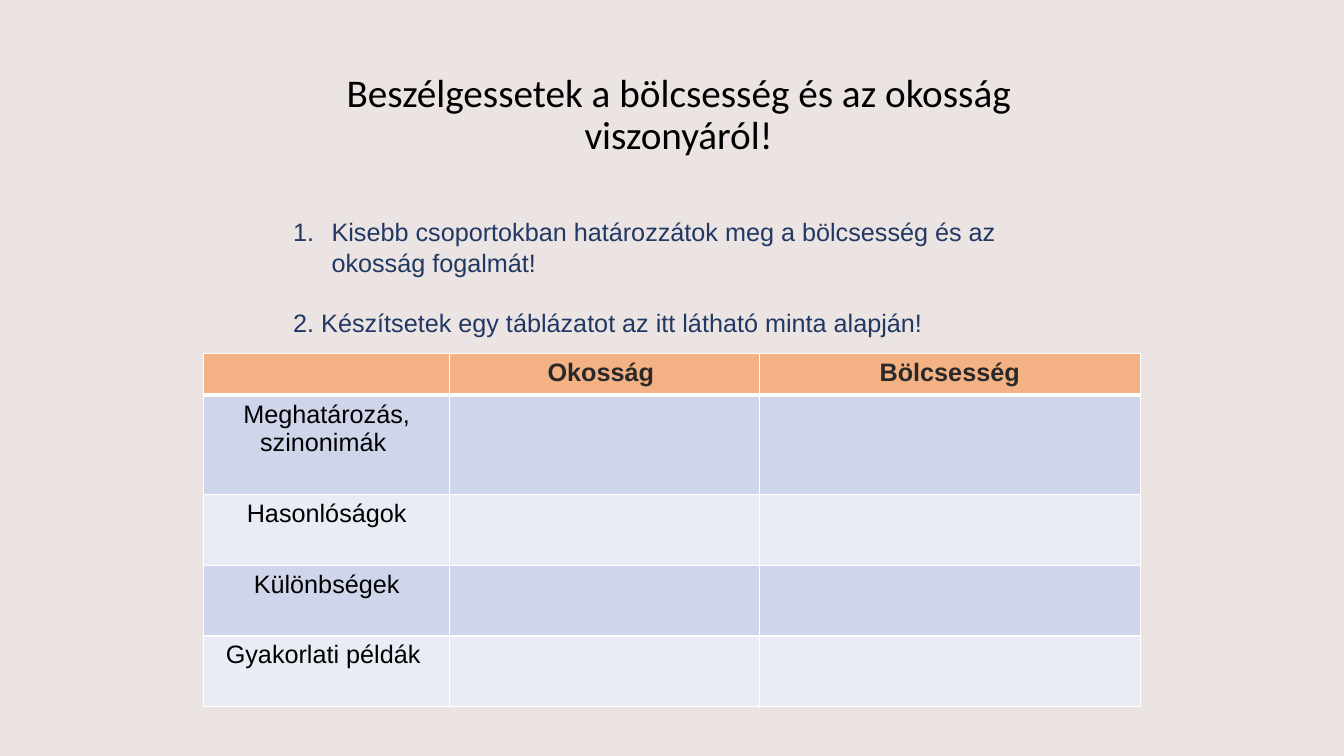
from lxml import etree
from pptx import Presentation
from pptx import util as u
from pptx.dml.color import RGBColor
from pptx.enum import text
from pptx.oxml import ns

BACKGROUND = RGBColor(0xEC, 0xE4, 0xE2)
BLACK = RGBColor(0x00, 0x00, 0x00)
NAVY = RGBColor(0x20, 0x38, 0x64)
CHARCOAL = RGBColor(0x29, 0x29, 0x29)
WHITE = RGBColor(0xFF, 0xFF, 0xFF)
ORANGE = RGBColor(0xF4, 0xB1, 0x83)
BLUE = RGBColor(0xCF, 0xD5, 0xEA)
PALE_BLUE = RGBColor(0xE9, 0xEB, 0xF5)


def add_run(paragraph, wording, size, color, font="Arial", bold=False):
    run = paragraph.add_run()
    run.text = wording
    run.font.size = u.Pt(size)
    run.font.name = font
    run.font.bold = bold
    run.font.color.rgb = color


def style_cell(cell, color, bottom_width):
    properties = cell._tc.get_or_add_tcPr()
    for side, width in (("lnL", 1), ("lnR", 1), ("lnT", 1), ("lnB", bottom_width)):
        line = etree.SubElement(properties, ns.qn(f"a:{side}"), w=str(u.Pt(width)))
        solid = etree.SubElement(line, ns.qn("a:solidFill"))
        etree.SubElement(solid, ns.qn("a:srgbClr"), val=str(WHITE))
    cell.fill.solid()
    cell.fill.fore_color.rgb = color


presentation = Presentation()
presentation.slide_width = u.Inches(13.33)
presentation.slide_height = u.Inches(7.5)
slide = presentation.slides.add_slide(presentation.slide_layouts[6])
slide.background.fill.solid()
slide.background.fill.fore_color.rgb = BACKGROUND

title = slide.shapes.add_textbox(u.Inches(2.73), u.Inches(0.68), u.Inches(8), u.Inches(1.42))
title.text_frame.word_wrap = True
paragraph = title.text_frame.paragraphs[0]
paragraph.alignment = text.PP_ALIGN.CENTER
paragraph.line_spacing = 0.9
paragraph.space_before = u.Pt(10)
add_run(paragraph, "Beszélgessetek a bölcsesség és az okosság viszonyáról!", 28, BLACK, "Calibri")

tasks = slide.shapes.add_textbox(u.Inches(2.81), u.Inches(2.1), u.Inches(8.11), u.Inches(1.31))
tasks.text_frame.word_wrap = True
paragraph = tasks.text_frame.paragraphs[0]
add_run(paragraph, "Kisebb csoportokban határozzátok meg a bölcsesség és az okosság fogalmát!", 18, NAVY)
properties = paragraph._p.get_or_add_pPr()
properties.set("marL", str(u.Inches(0.38)))
properties.set("indent", str(u.Inches(-0.38)))
color = etree.SubElement(properties, ns.qn("a:buClr"))
etree.SubElement(color, ns.qn("a:srgbClr"), val=str(NAVY))
etree.SubElement(properties, ns.qn("a:buFont"), typeface="Arial")
etree.SubElement(properties, ns.qn("a:buAutoNum"), type="arabicPeriod")
paragraph = tasks.text_frame.add_paragraph()
paragraph.space_before = u.Pt(21.5)
add_run(paragraph, "2. Készítsetek egy táblázatot az itt látható minta alapján!", 18, NAVY)

column_widths = [2.44, 3.07, 3.78]
rows = [
    (0.41, ORANGE, ["", "Okosság ", "Bölcsesség"]),
    (0.99, BLUE, ["Meghatározás, szinonimák ", "", ""]),
    (0.7, PALE_BLUE, ["Hasonlóságok", "", ""]),
    (0.7, BLUE, ["Különbségek", "", ""]),
    (0.7, PALE_BLUE, ["Gyakorlati példák ", "", ""]),
]
table = slide.shapes.add_table(
    len(rows), len(column_widths), u.Inches(2.02), u.Inches(3.51), u.Inches(9.29), u.Inches(3.5)
).table
for column, width in zip(table.columns, column_widths):
    column.width = u.Inches(width)
for row_index, (height, fill, wordings) in enumerate(rows):
    table.rows[row_index].height = u.Inches(height)
    header = row_index == 0
    for column_index, wording in enumerate(wordings):
        cell = table.cell(row_index, column_index)
        style_cell(cell, fill, 3 if header else 1)
        paragraph = cell.text_frame.paragraphs[0]
        paragraph.alignment = text.PP_ALIGN.CENTER
        if wording:
            add_run(paragraph, wording, 18, CHARCOAL if header else BLACK, bold=header)

presentation.save("out.pptx")
